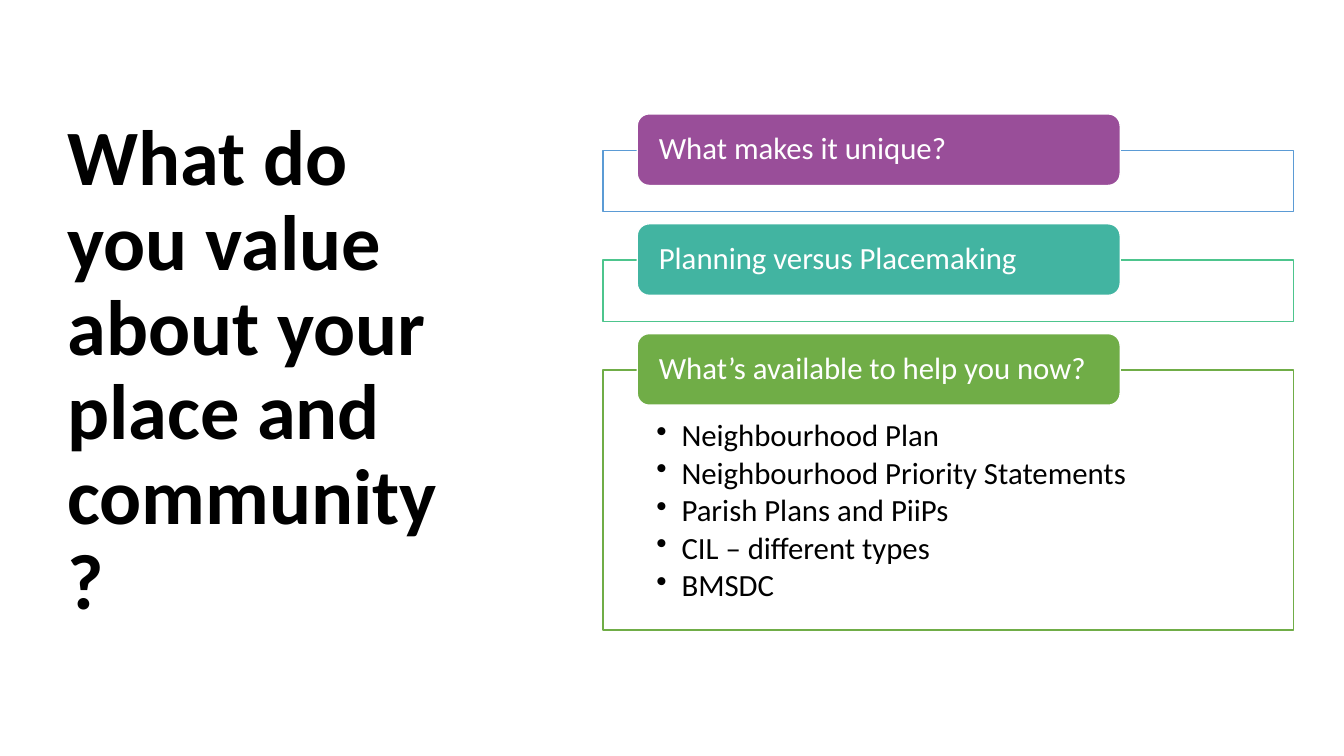
from lxml import etree
from pptx import Presentation
from pptx import util as u
from pptx.dml import color
from pptx.enum import shapes, text
from pptx.oxml import ns

COLORS = {
    "black": "000000", "white": "FFFFFF", "blue": "5B9BD5", "purple": "994E99",
    "mint": "4DC58D", "teal": "42B4A1", "green": "70AD47",
}
TOPICS = [
    ("What makes it unique?", "purple", "blue", 0.61, []),
    ("Planning versus Placemaking", "teal", "mint", 0.61, []),
    ("What’s available to help you now?", "green", "green", 2.58, [
        "Neighbourhood Plan",
        "Neighbourhood Priority Statements",
        "Parish Plans and PiiPs",
        "CIL – different types",
        "BMSDC",
    ]),
]
FIRST_TOP, TOPIC_PITCH, FRAME_DROP = 1.13, 1.09, 0.36


class SlideBuilder:
    """Draws the slide's title, topic frames and topic labels in one style."""

    font_name = "Calibri"
    body_size = 22

    def __init__(self, slide):
        self.slide = slide

    def color(self, name):
        return color.RGBColor.from_string(COLORS[name])

    def set_text(self, shape, lines, size, color_name, anchor, insets=None, space_after=0):
        frame = shape.text_frame
        frame.word_wrap = True
        frame.vertical_anchor = anchor
        if insets:
            (frame.margin_left, frame.margin_top,
             frame.margin_right, frame.margin_bottom) = map(u.Inches, insets)
        frame.text = "\n".join(lines)
        for paragraph in frame.paragraphs:
            paragraph.alignment = text.PP_ALIGN.LEFT
            paragraph.line_spacing = 0.9
            paragraph.space_after = u.Pt(space_after)
            paragraph.font.name = self.font_name
            paragraph.font.size = u.Pt(size)
            paragraph.font.color.rgb = self.color(color_name)
        return frame.paragraphs

    def title(self, wording, *box):
        shape = self.slide.shapes.add_textbox(*map(u.Inches, box))
        for paragraph in self.set_text(shape, [wording], 56, "black", text.MSO_ANCHOR.MIDDLE):
            paragraph.font.bold = True

    def panel(self, kind, box, fill, line):
        shape = self.slide.shapes.add_shape(kind, *map(u.Inches, box))
        shape.shadow.inherit = False
        shape.fill.solid()
        shape.fill.fore_color.rgb = self.color(fill)
        shape.line.color.rgb = self.color(line)
        shape.line.width = u.Pt(1)
        return shape

    def frame(self, top, height, line, items):
        box = (5.98, top, 6.85, height)
        shape = self.panel(shapes.MSO_SHAPE.RECTANGLE, box, "white", line)
        fill_color = shape._element.spPr.find(ns.qn("a:solidFill"))[0]
        etree.SubElement(fill_color, ns.qn("a:alpha"), val="90000")
        if items:
            paragraphs = self.set_text(shape, items, self.body_size, "black",
                                       text.MSO_ANCHOR.TOP, (0.53, 0.5, 0.53, 0.17), 3)
            for paragraph in paragraphs:
                self.bullet(paragraph)

    def bullet(self, paragraph):
        properties = paragraph._p.get_or_add_pPr()
        properties.set("marL", str(u.Inches(0.25)))
        properties.set("indent", str(u.Inches(-0.25)))
        mark = etree.Element(ns.qn("a:buChar"), char="•")
        properties.find(ns.qn("a:defRPr")).addprevious(mark)

    def label(self, top, wording, fill):
        box = (6.32, top, 4.79, 0.71)
        shape = self.panel(shapes.MSO_SHAPE.ROUNDED_RECTANGLE, box, fill, "white")
        self.set_text(shape, [wording], self.body_size, "white",
                      text.MSO_ANCHOR.MIDDLE, (0.18, 0, 0.18, 0))


def main():
    presentation = Presentation()
    presentation.slide_width = u.Inches(13.33)
    presentation.slide_height = u.Inches(7.5)
    slide = presentation.slides.add_slide(presentation.slide_layouts[6])
    builder = SlideBuilder(slide)
    builder.title("What do you value about your place and community?", 0.57, 0.68, 4.16, 6.02)
    for index, (wording, fill, line, height, items) in enumerate(TOPICS):
        top = FIRST_TOP + index * TOPIC_PITCH
        builder.frame(top + FRAME_DROP, height, line, items)
        builder.label(top, wording, fill)
    presentation.save("out.pptx")


if __name__ == "__main__":
    main()
